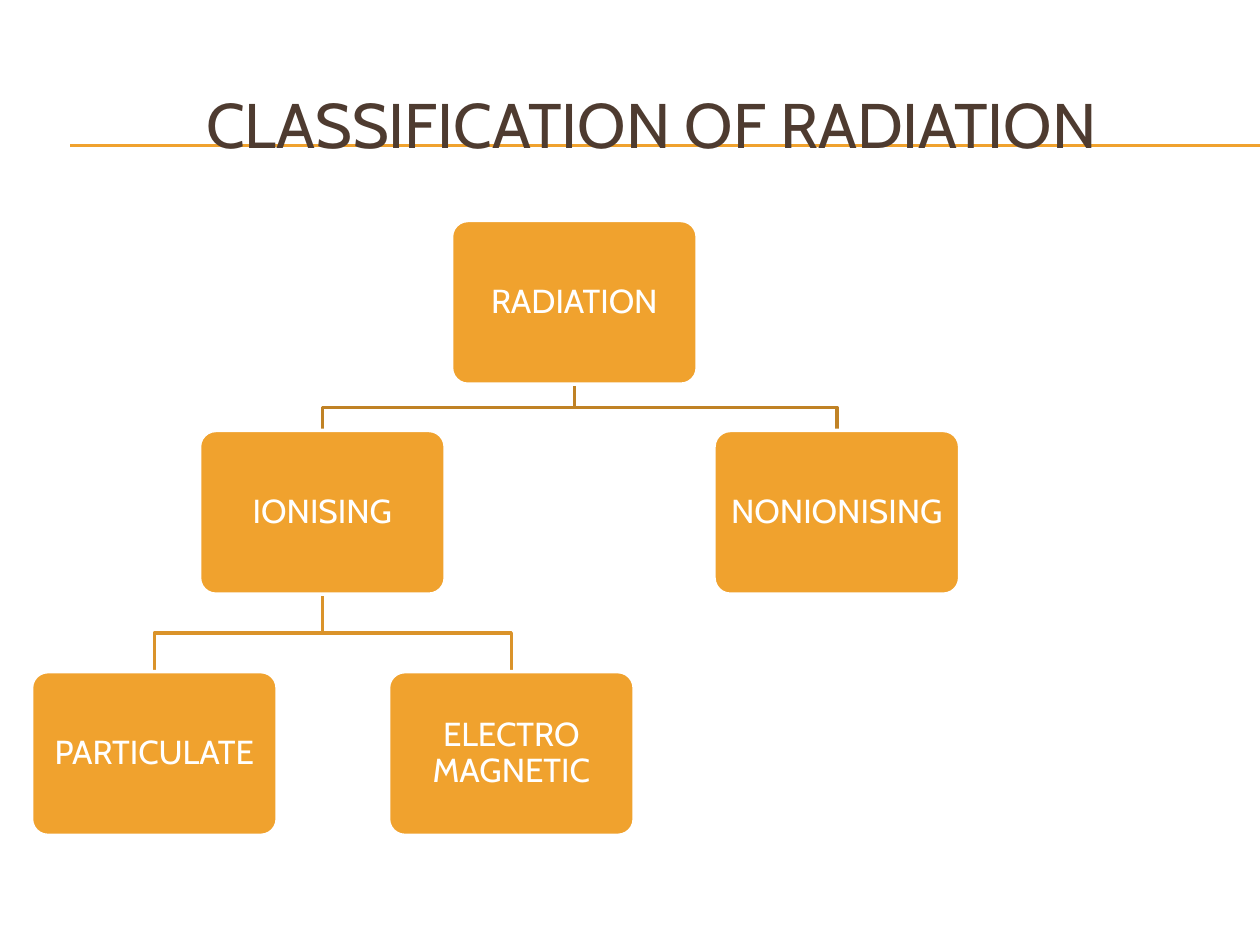
"""Build the slide that classifies radiation as a tree."""
import pptx
import pptx.util
import pptx.dml.color
import pptx.enum.shapes
import pptx.enum.text
from lxml import etree

Pt = pptx.util.Pt
RGB = pptx.dml.color.RGBColor
MID = pptx.enum.text.MSO_ANCHOR.MIDDLE
AMBER = RGB(0xF0, 0xA2, 0x2E)
WHITE = RGB(0xFF, 0xFF, 0xFF)
BROWN = RGB(0x4E, 0x3B, 0x30)
DARK = RGB(0xC0, 0x82, 0x25)
LIGHT = RGB(0xDA, 0x93, 0x2A)
FONT = "Cabin"
WIDE, HIGH = 140.4, 93.6

TITLE = "CLASSIFICATION OF RADIATION"
RULES = [82.8, 83.5]
TOPS = [126, 246, 383.8]
TINTS = [None, DARK, LIGHT]
NODES = {
    "RADIATION": (328.2, 0, None),
    "IONISING": (184.2, 1, "RADIATION"),
    "NONIONISING": (478.2, 1, "RADIATION"),
    "PARTICULATE": (88.2, 2, "IONISING"),
    "ELECTRO MAGNETIC": (292.2, 2, "IONISING"),
}


def write(para, text, size, color):
    run = para.add_run()
    run.text = text
    run.font.name = FONT
    run.font.size = Pt(size)
    run.font.color.rgb = color


def add_rule(shapes, y):
    kind = pptx.enum.shapes.MSO_CONNECTOR.STRAIGHT
    rule = shapes.add_connector(kind, Pt(40.3), Pt(y), Pt(720), Pt(y))
    rule.line.color.rgb = AMBER
    rule.line.width = Pt(0.75)
    props = rule._element.spPr
    etree.SubElement(props, pptx.oxml.ns.qn("a:effectLst"))


def add_title(shapes):
    box = shapes.add_textbox(Pt(23.8), Pt(36), Pt(684), Pt(68.4))
    frame = box.text_frame
    frame.word_wrap = True
    frame.vertical_anchor = MID
    frame.margin_left = Pt(94)
    write(frame.paragraphs[0], TITLE, 36, BROWN)


def add_branch(shapes, name):
    x, level, parent = NODES[name]
    if parent is None:
        return
    start, end = NODES[parent][0], TOPS[level]
    top = TOPS[level - 1] + HIGH
    mid = (top + end) / 2
    path = [(start, mid), (x, mid), (x, end)]
    pen = shapes.build_freeform(Pt(start), Pt(top))
    pen.add_line_segments([(Pt(a), Pt(b)) for a, b in path], close=False)
    branch = pen.convert_to_shape()
    branch.shadow.inherit = False
    branch.fill.background()
    branch.line.color.rgb = TINTS[level]
    branch.line.width = Pt(2)


def add_node(shapes, name):
    x, level, _ = NODES[name]
    kind = pptx.enum.shapes.MSO_SHAPE.ROUNDED_RECTANGLE
    box = shapes.add_shape(
        kind, Pt(x - WIDE / 2), Pt(TOPS[level]), Pt(WIDE), Pt(HIGH))
    box.adjustments[0] = 0.1
    box.shadow.inherit = False
    box.fill.solid()
    box.fill.fore_color.rgb = AMBER
    box.line.color.rgb = WHITE
    box.line.width = Pt(2)
    frame = box.text_frame
    frame.word_wrap = True
    frame.vertical_anchor = MID
    frame.margin_left = frame.margin_right = Pt(4)
    para = frame.paragraphs[0]
    para.alignment = pptx.enum.text.PP_ALIGN.CENTER
    para.line_spacing = 0.9
    write(para, name, 19, WHITE)


def main():
    deck = pptx.Presentation()
    deck.slide_width, deck.slide_height = Pt(720), Pt(540)
    shapes = deck.slides.add_slide(deck.slide_layouts[6]).shapes
    for y in RULES:
        add_rule(shapes, y)
    add_title(shapes)
    for name in NODES:
        add_branch(shapes, name)
    for name in NODES:
        add_node(shapes, name)
    deck.save("out.pptx")


if __name__ == "__main__":
    main()
